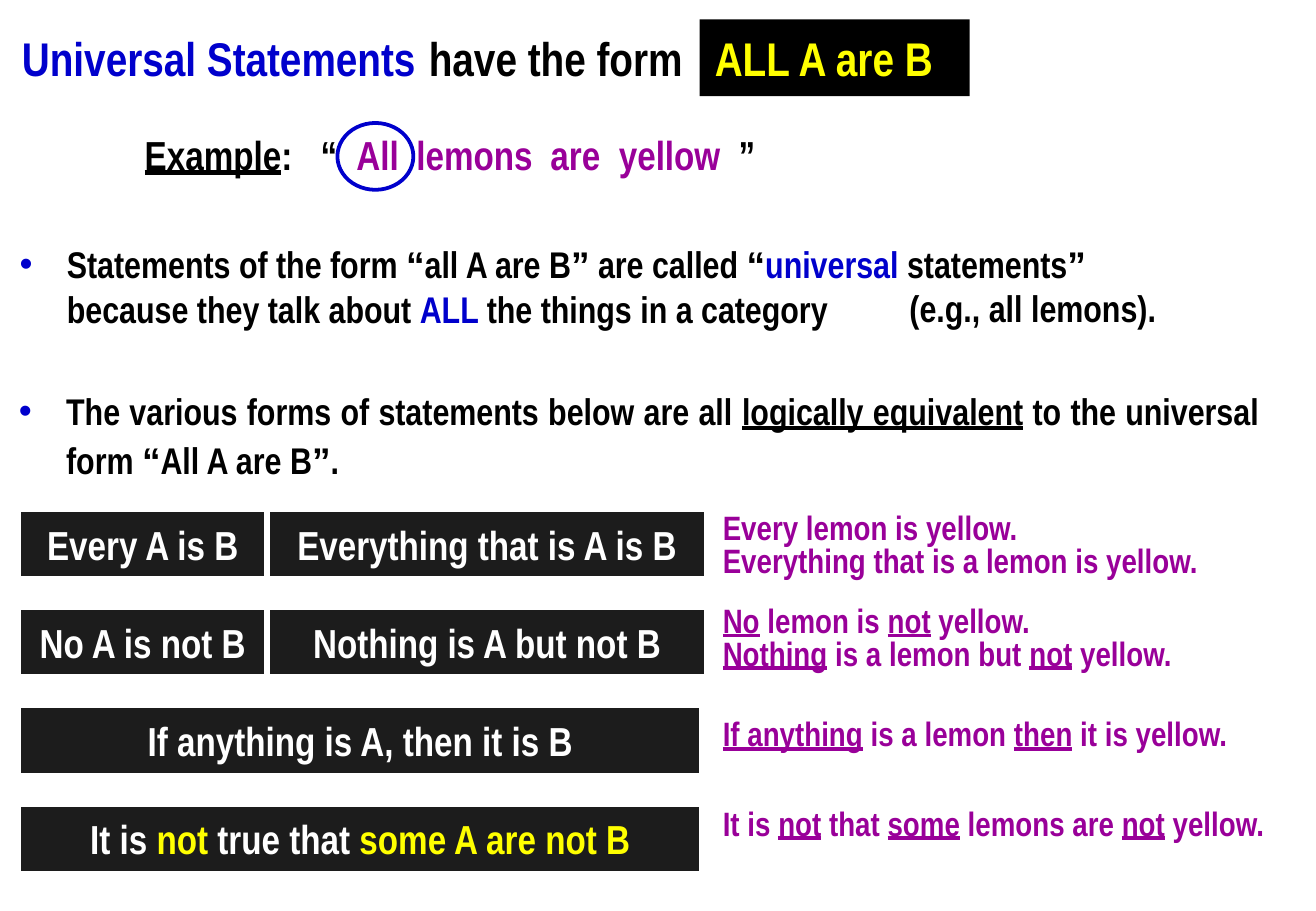
from lxml import etree
from pptx import Presentation
from pptx.dml.color import RGBColor
from pptx.enum import shapes, text
from pptx.oxml import ns
from pptx.util import Pt

BLACK = RGBColor(0x00, 0x00, 0x00)
WHITE = RGBColor(0xFF, 0xFF, 0xFF)
CHARCOAL = RGBColor(0x1C, 0x1C, 0x1C)
BLUE = RGBColor(0x00, 0x00, 0xCC)
PURPLE = RGBColor(0x99, 0x00, 0x99)
YELLOW = RGBColor(0xFF, 0xFF, 0x00)
LEFT, CENTER, JUSTIFY = text.PP_ALIGN.LEFT, text.PP_ALIGN.CENTER, text.PP_ALIGN.JUSTIFY
MIDDLE, TOP = text.MSO_ANCHOR.MIDDLE, text.MSO_ANCHOR.TOP

# Content: a paragraph is a list of spans, each a string or (string, style)
UNDER = {"underline": True}
IN_BLUE, IN_PURPLE, IN_YELLOW = {"color": BLUE}, {"color": PURPLE}, {"color": YELLOW}
OPEN, CLOSE = ("“", {"font": "Arial"}), ("”", {"font": "Arial"})

EXAMPLE = [("Example", UNDER), ":\t“\t", ("All\tlemons\tare\tyellow\t", IN_PURPLE), "”"]
EXAMPLE_TABS = [104.3, 125.5, 161, 240.5, 281, 352]
CALLED = [
    ["Statements of the form ", OPEN, "all A are B", CLOSE, " are called ", OPEN,
     ("universal", IN_BLUE), " statements", CLOSE],
    ["because they talk about ", ("ALL ", IN_BLUE), "the things in a category"],
]
EQUIVALENT = [["The various forms of statements below are all ", ("logically equivalent", UNDER),
               " to the universal form ", OPEN, "All A are B", CLOSE, "."]]
FORM_ROWS = [
    [["Every A is B"], ["Everything that is A is B"]],
    [["No A is not B"], ["Nothing is A but not B"]],
    [["If anything is A, then it is B"]],
    [["It is ", ("not", IN_YELLOW), " true that ", ("some A are not B", IN_YELLOW)]],
]
# Lemon sentences: line spacing, space before, spans
LEMONS = [
    (0.8, 0, ["Every lemon is yellow."]),
    (0.8, 0, ["Everything that is a lemon is yellow."]),
    (1.2, 7, [("No", UNDER), " lemon is ", ("not", UNDER), " yellow."]),
    (0.8, 0, [("Nothing", UNDER), " is a lemon but ", ("not", UNDER), " yellow."]),
    (1.5, 12, [("If anything", UNDER), " is a lemon ", ("then", UNDER), " it is yellow."]),
    (1.45, 18, ["It is ", ("not", UNDER), " that ", ("some", UNDER), " lemons are ",
                ("not", UNDER), " yellow."]),
]

deck = Presentation()
deck.slide_width, deck.slide_height = Pt(780), Pt(540)
page = deck.slides.add_slide(deck.slide_layouts[6])


def write(box, paras, size, color=BLACK, align=LEFT, anchor=TOP, inset=(0, 0)):
    frame = box.text_frame
    frame.word_wrap = True
    frame.vertical_anchor = anchor
    frame.margin_left = frame.margin_right = Pt(inset[0])
    frame.margin_top = frame.margin_bottom = Pt(inset[1])
    for index, spans in enumerate(paras):
        para = frame.add_paragraph() if index else frame.paragraphs[0]
        para.alignment = align
        for item in spans:
            words, style = (item, {}) if isinstance(item, str) else item
            span = para.add_run()
            span.text = words
            span.font.size, span.font.bold = Pt(size), True
            span.font.name = style.get("font", "Arial Narrow")
            span.font.color.rgb = style.get("color", color)
            span.font.underline = style.get("underline", False)
    return frame.paragraphs


def add_text(place, paras, size, **options):
    box = page.shapes.add_textbox(*map(Pt, place))
    return write(box, paras, size, **options)


def add_panel(kind, place, fill=None, line=None):
    panel = page.shapes.add_shape(kind, *map(Pt, place))
    panel.shadow.inherit = False
    if fill is None:
        panel.fill.background()
    else:
        panel.fill.solid()
        panel.fill.fore_color.rgb = fill
    if line is None:
        panel.line.fill.background()
    else:
        panel.line.color.rgb, panel.line.width = line, Pt(2.25)
    return panel


def hang(para, bullet):
    props = para._p.get_or_add_pPr()
    props.set("marL", str(Pt(28)))
    props.set("indent", str(Pt(-28) if bullet else 0))
    if bullet:
        tint = etree.SubElement(props, ns.qn("a:buClr"))
        etree.SubElement(tint, ns.qn("a:srgbClr"), val=str(BLUE))
        etree.SubElement(props, ns.qn("a:buFont"), typeface="Arial")
        etree.SubElement(props, ns.qn("a:buChar"), char="•")


# Heading
RECT = shapes.MSO_SHAPE.RECTANGLE
add_text((13, 17.3, 240, 34), [["Universal Statements"]], 28, color=BLUE, anchor=MIDDLE)
add_text((254.2, 17.3, 158, 34), [["have the form"]], 28, anchor=MIDDLE)
formula = add_panel(RECT, (414.7, 11.5, 160, 45.5), fill=BLACK)
write(formula, [["ALL A are B"]], 28, color=YELLOW, anchor=MIDDLE, inset=(9, 0))

# Example with its circled quantifier
example = add_text((79, 73.4, 424, 35.3), [EXAMPLE], 24, inset=(6.8, 3.6))[0]
stops = etree.SubElement(example._p.get_or_add_pPr(), ns.qn("a:tabLst"))
for stop in EXAMPLE_TABS:
    etree.SubElement(stops, ns.qn("a:tab"), pos=str(Pt(stop)), algn="l")
add_panel(shapes.MSO_SHAPE.OVAL, (200, 72.9, 45, 39.6), line=BLUE)

# Bulleted explanation
called = add_text((4.6, 139.7, 725, 60), CALLED, 22, inset=(7.2, 3.6))
for number, para in enumerate(called):
    hang(para, bullet=number == 0)
add_text((532, 165.6, 175, 34), [["(e.g., all lemons)."]], 22, inset=(7.2, 3.6))
equivalent = add_text((8.2, 224.6, 741, 64), EQUIVALENT, 22, align=JUSTIFY, inset=(3, 3))[0]
equivalent.line_spacing = 1.1
hang(equivalent, bullet=True)

# Equivalent forms
FORM_LEFT, FORM_TOP, FORM_PITCH, FORM_HEIGHT = 11.5, 302.4, 58.2, 40.3
COLUMNS = {1: [(0, 404)], 2: [(0, 146.2), (147.6, 259.2)]}
for row, forms in enumerate(FORM_ROWS):
    top = FORM_TOP + row * FORM_PITCH
    for (offset, width), spans in zip(COLUMNS[len(forms)], forms):
        panel = add_panel(RECT, (FORM_LEFT + offset, top, width, FORM_HEIGHT), CHARCOAL, WHITE)
        write(panel, [spans], 24, color=WHITE, align=CENTER, anchor=MIDDLE, inset=(0, 5.8))

# Lemon sentences
lemons = add_text((428.4, 305.3, 350, 203), [spans for _, _, spans in LEMONS], 20,
                  color=PURPLE, align=JUSTIFY)
for para, (spacing, before, _) in zip(lemons, LEMONS):
    para.line_spacing, para.space_before = spacing, Pt(before)

deck.save("out.pptx")
